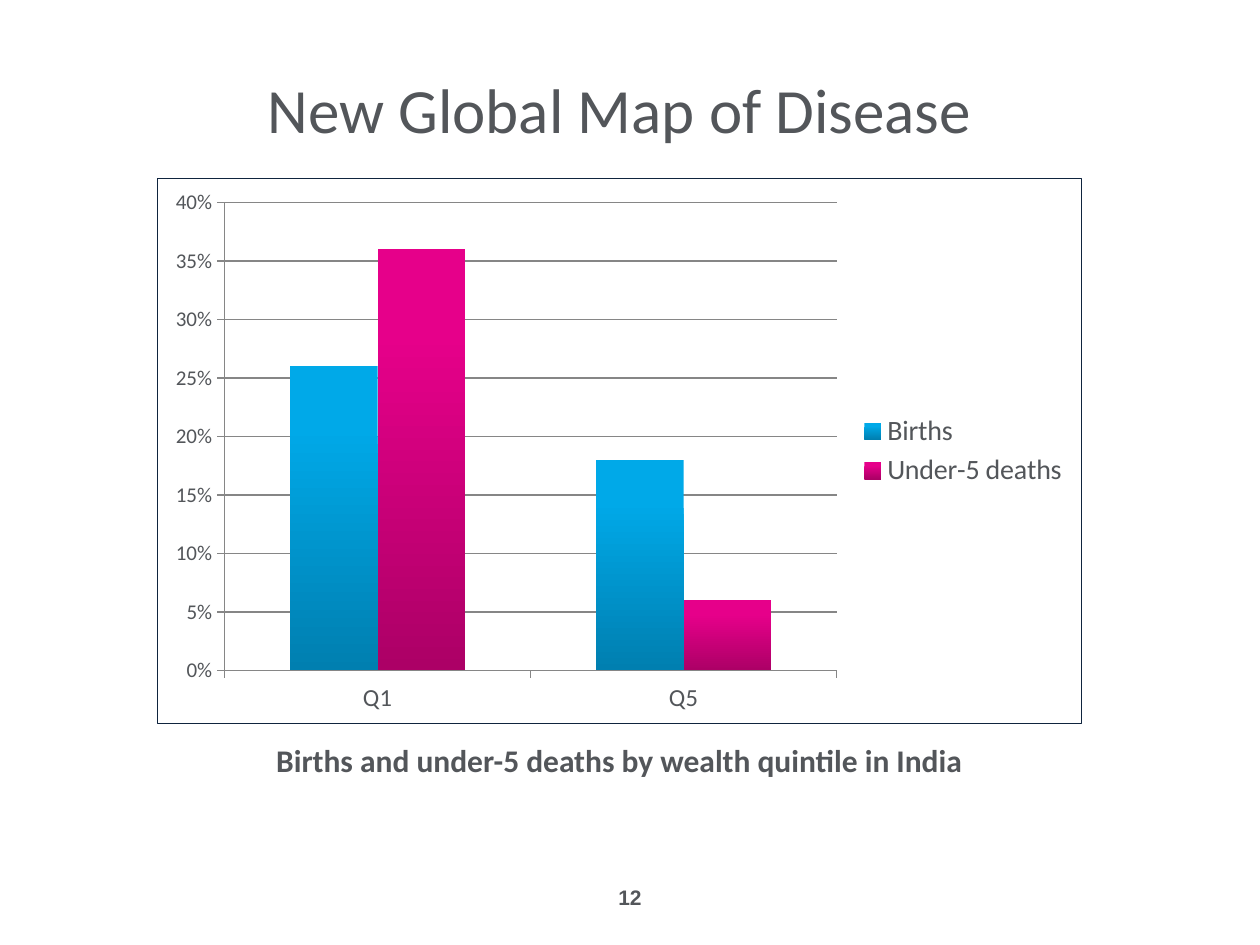
from dataclasses import dataclass

from lxml import etree
from pptx import Presentation
from pptx.chart.data import CategoryChartData
from pptx.dml.color import RGBColor
from pptx.enum.chart import XL_CHART_TYPE, XL_LEGEND_POSITION, XL_TICK_MARK
from pptx.enum.text import MSO_ANCHOR, MSO_AUTO_SIZE, PP_ALIGN
from pptx.oxml import parse_xml
from pptx.oxml.ns import nsdecls, qn
from pptx.util import Pt

COLUMNS = XL_CHART_TYPE.COLUMN_CLUSTERED
LEGEND_RIGHT = XL_LEGEND_POSITION.RIGHT
TICK_OUTSIDE = XL_TICK_MARK.OUTSIDE
TICK_NONE = XL_TICK_MARK.NONE
TOP, MIDDLE = MSO_ANCHOR.TOP, MSO_ANCHOR.MIDDLE
NO_AUTOFIT = MSO_AUTO_SIZE.NONE
CENTER = PP_ALIGN.CENTER
TITLE_ONLY = 5

TITLE = "New Global Map of Disease"
CAPTION = "Births and under-5 deaths by wealth quintile in India"
PAGE_NUMBER = "12"
QUINTILES = ["Q1", "Q5"]
SERIES = [
    {"name": "Births", "values": (0.26, 0.18), "top": "00A9E8", "bottom": "007FB0"},
    {"name": "Under-5 deaths", "values": (0.36, 0.06), "top": "E6008A", "bottom": "AC0066"},
]

SLIDE_SIZE = (1260, 945)
TITLE_BOX = (32, 38, 1175, 141)
CHART_BOX = (157, 178, 925, 546)
PLOT_BOX = (224, 202, 613, 469)
CAPTION_BOX = (262, 735, 715, 51)
PAGE_NUMBER_BOX = (483, 872, 294, 51)


@dataclass(frozen=True)
class Theme:
    text: str = "53565A"
    border: str = "0F243E"
    grid: str = "868686"
    font: str = "Calibri"
    number_font: str = "Arial"
    title_size: int = 36
    caption_size: int = 18
    legend_size: int = 16
    category_size: int = 14
    value_size: int = 12
    number_size: int = 12


THEME = Theme()


def px(length):
    return round(length * 914400 / 126)


def place(box):
    return [px(length) for length in box]


def rgb(color):
    return RGBColor.from_string(color)


def style_font(font, size, name=THEME.font, bold=False):
    font.name = name
    font.size = Pt(size)
    font.bold = bold
    font.color.rgb = rgb(THEME.text)


def write_text(shape, text, box, size, name=THEME.font, bold=False, anchor=MIDDLE):
    shape.left, shape.top, shape.width, shape.height = place(box)
    frame = shape.text_frame
    frame.text = text
    frame.word_wrap = True
    frame.auto_size = NO_AUTOFIT
    frame.vertical_anchor = anchor
    paragraph = frame.paragraphs[0]
    paragraph.alignment = CENTER
    style_font(paragraph.runs[0].font, size, name, bold)


def style_line(line, color):
    line.color.rgb = rgb(color)
    line.width = Pt(0.75)


def style_axis(axis, size):
    axis.major_tick_mark = TICK_OUTSIDE
    axis.minor_tick_mark = TICK_NONE
    style_font(axis.tick_labels.font, size)
    style_line(axis.format.line, THEME.grid)


def frame_chart(chart):
    border = parse_xml(
        f'<c:spPr {nsdecls("c", "a")}><a:noFill/><a:ln w="{Pt(0.75)}">'
        f'<a:solidFill><a:srgbClr val="{THEME.border}"/></a:solidFill>'
        "</a:ln></c:spPr>"
    )
    chart.element.find(qn("c:txPr")).addprevious(border)


def position_plot(chart):
    plot_area = chart.element.find(".//" + qn("c:plotArea"))
    for old_layout in plot_area.findall(qn("c:layout")):
        plot_area.remove(old_layout)
    left, top, width, height = CHART_BOX
    fractions = {
        "x": (PLOT_BOX[0] - left) / width,
        "y": (PLOT_BOX[1] - top) / height,
        "w": PLOT_BOX[2] / width,
        "h": PLOT_BOX[3] / height,
    }
    layout = etree.Element(qn("c:layout"))
    manual = etree.SubElement(layout, qn("c:manualLayout"))
    settings = {"layoutTarget": "inner", "xMode": "edge", "yMode": "edge"}
    settings.update({key: f"{value:.4f}" for key, value in fractions.items()})
    for key, value in settings.items():
        etree.SubElement(manual, qn(f"c:{key}"), val=value)
    plot_area.insert(0, layout)


def add_quintile_chart(slide):
    data = CategoryChartData(number_format="0%")
    data.categories = QUINTILES
    for item in SERIES:
        data.add_series(item["name"], item["values"])
    chart = slide.shapes.add_chart(COLUMNS, *place(CHART_BOX), data).chart
    chart.has_title = False
    style_font(chart.font, THEME.value_size)
    frame_chart(chart)
    position_plot(chart)

    style_axis(chart.category_axis, THEME.category_size)
    value_axis = chart.value_axis
    style_axis(value_axis, THEME.value_size)
    value_axis.minimum_scale, value_axis.maximum_scale = 0, 0.4
    value_axis.major_unit = 0.05
    value_axis.tick_labels.number_format = "0%"
    value_axis.tick_labels.number_format_is_linked = False
    value_axis.has_major_gridlines = True
    style_line(value_axis.major_gridlines.format.line, THEME.grid)

    chart.has_legend = True
    chart.legend.position = LEGEND_RIGHT
    chart.legend.include_in_layout = False
    style_font(chart.legend.font, THEME.legend_size)

    plot = chart.plots[0]
    plot.gap_width = 150
    plot.overlap = 0
    plot.vary_by_categories = False
    for series, item in zip(plot.series, SERIES):
        series.invert_if_negative = False
        fill = series.format.fill
        fill.gradient()
        fill.gradient_angle = 270
        for stop, position, key in zip(fill.gradient_stops, (0.2, 1), ("top", "bottom")):
            stop.position = position
            stop.color.rgb = rgb(item[key])


def main():
    presentation = Presentation()
    presentation.slide_width, presentation.slide_height = place(SLIDE_SIZE)
    slide = presentation.slides.add_slide(presentation.slide_layouts[TITLE_ONLY])
    write_text(slide.shapes.title, TITLE, TITLE_BOX, THEME.title_size)
    add_quintile_chart(slide)
    caption = slide.shapes.add_textbox(*place(CAPTION_BOX))
    write_text(caption, CAPTION, CAPTION_BOX, THEME.caption_size, bold=True, anchor=TOP)
    number = slide.shapes.add_textbox(*place(PAGE_NUMBER_BOX))
    write_text(number, PAGE_NUMBER, PAGE_NUMBER_BOX, THEME.number_size,
               name=THEME.number_font, bold=True)
    presentation.save("out.pptx")


if __name__ == "__main__":
    main()
